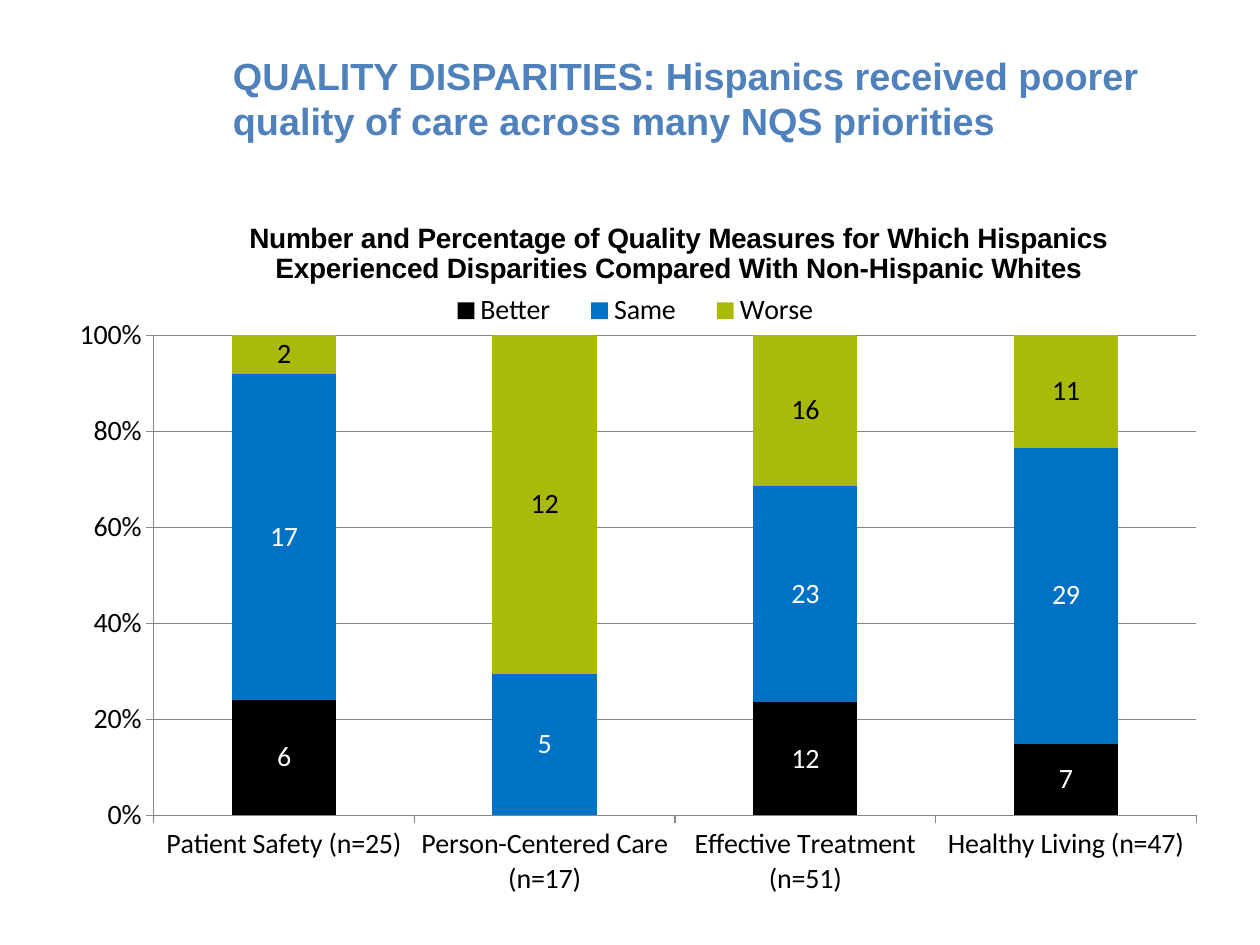
from lxml import etree
from pptx import Presentation
from pptx.chart.data import CategoryChartData
from pptx.dml.color import RGBColor
from pptx.enum.chart import XL_CHART_TYPE, XL_LABEL_POSITION, XL_LEGEND_POSITION, XL_TICK_MARK
from pptx.enum.text import MSO_ANCHOR
from pptx.oxml.ns import qn
from pptx.util import Inches, Pt

STACK = XL_CHART_TYPE.COLUMN_STACKED_100
CENTER = XL_LABEL_POSITION.CENTER
TOP = XL_LEGEND_POSITION.TOP
OUT = XL_TICK_MARK.OUTSIDE
MIDDLE = MSO_ANCHOR.MIDDLE
WIDE, HIGH = Inches(10), Inches(7.5)
HEX = {"head": "4F81BD", "ink": "000000", "white": "FFFFFF", "grid": "868686",
       "same": "0072C6", "worse": "AABA0A"}
HEAD = "QUALITY DISPARITIES: Hispanics received poorer quality of care across many NQS priorities"
TITLE = ("Number and Percentage of Quality Measures for Which Hispanics "
         "Experienced Disparities Compared With Non-Hispanic Whites")
CATS = ["Patient Safety (n=25)", "Person-Centered Care (n=17)",
        "Effective Treatment (n=51)", "Healthy Living (n=47)"]
ROWS = [("Better", (6, None, 12, 7), "ink", "white"),
        ("Same", (17, 5, 23, 29), "same", "white"),
        ("Worse", (2, 12, 16, 11), "worse", "ink")]


def area(left, top, wide, high):
    """Turn shares of the slide into lengths."""
    return int(left * WIDE), int(top * HIGH), int(wide * WIDE), int(high * HIGH)


def style(font, size, name, tint, bold=False):
    """Set size, face, colour and weight of a font."""
    font.size, font.name, font.bold = Pt(size), name, bold
    font.color.rgb = RGBColor.from_string(HEX[tint])


def place(chart, tag, index, **parts):
    """Give one part of the chart a manual layout."""
    host = chart.element.xpath(f"c:chart/{tag}")[0]
    for old in host.findall(qn("c:layout")):
        host.remove(old)
    layout = etree.Element(qn("c:layout"))
    manual = etree.SubElement(layout, qn("c:manualLayout"))
    for name, value in parts.items():
        etree.SubElement(manual, qn(f"c:{name}")).set("val", str(value))
    host.insert(index, layout)


def add_head(slide):
    """Add the slide heading."""
    frame = slide.shapes.add_textbox(*area(0.175, 0.04, 0.775, 0.127)).text_frame
    frame.word_wrap, frame.vertical_anchor = True, MIDDLE
    para = frame.paragraphs[0]
    para.text = HEAD
    style(para.font, 21.6, "Arial", "head", True)


def set_axis(axis):
    """Style the text, ticks and line of an axis."""
    style(axis.tick_labels.font, 16, "Calibri", "ink")
    axis.major_tick_mark = OUT
    set_line(axis.format.line)


def set_line(line):
    """Draw a thin grey line."""
    line.color.rgb = RGBColor.from_string(HEX["grid"])
    line.width = Pt(0.75)


def set_bars(plot):
    """Colour each series and its labels."""
    plot.gap_width, plot.overlap, plot.vary_by_categories = 150, 100, False
    for series, (_, _, fill, ink) in zip(plot.series, ROWS):
        series.format.fill.solid()
        series.format.fill.fore_color.rgb = RGBColor.from_string(HEX[fill])
        labels = series.data_labels
        labels.show_value, labels.position = True, CENTER
        style(labels.font, 16, "Calibri", ink)


def add_chart(slide):
    """Add the stacked chart with its title, legend and axes."""
    data = CategoryChartData()
    data.categories = CATS
    for name, values, _, _ in ROWS:
        data.add_series(name, values)
    box = area(0.05, 0.213, 0.9, 0.747)
    chart = slide.shapes.add_chart(STACK, *box, data).chart
    style(chart.font, 10, "Arial", "ink")
    chart.has_title = chart.has_legend = True
    para = chart.chart_title.text_frame.paragraphs[0]
    para.text = TITLE
    style(para.font, 16, "Arial", "ink", True)
    chart.legend.position, chart.legend.include_in_layout = TOP, False
    style(chart.legend.font, 16, "Calibri", "ink")
    set_bars(chart.plots[0])
    axis = chart.value_axis
    set_axis(chart.category_axis)
    set_axis(axis)
    axis.minimum_scale, axis.maximum_scale, axis.major_unit = 0, 1, 0.2
    axis.tick_labels.number_format = "0%"
    axis.tick_labels.number_format_is_linked = False
    set_line(axis.major_gridlines.format.line)
    place(chart, "c:title", 1, xMode="edge", yMode="edge", x=0.16, y=0.02)
    place(chart, "c:legend", 1, xMode="edge", yMode="edge", x=0.32, y=0.13, w=0.37, h=0.05)
    place(chart, "c:plotArea", 0, layoutTarget="inner", xMode="edge", yMode="edge",
          x=0.08, y=0.19, w=0.92, h=0.68)


def main():
    """Build and save the slide."""
    deck = Presentation()
    deck.slide_width, deck.slide_height = WIDE, HIGH
    slide = deck.slides.add_slide(deck.slide_layouts[6])
    add_head(slide)
    add_chart(slide)
    deck.save("out.pptx")


if __name__ == "__main__":
    main()
